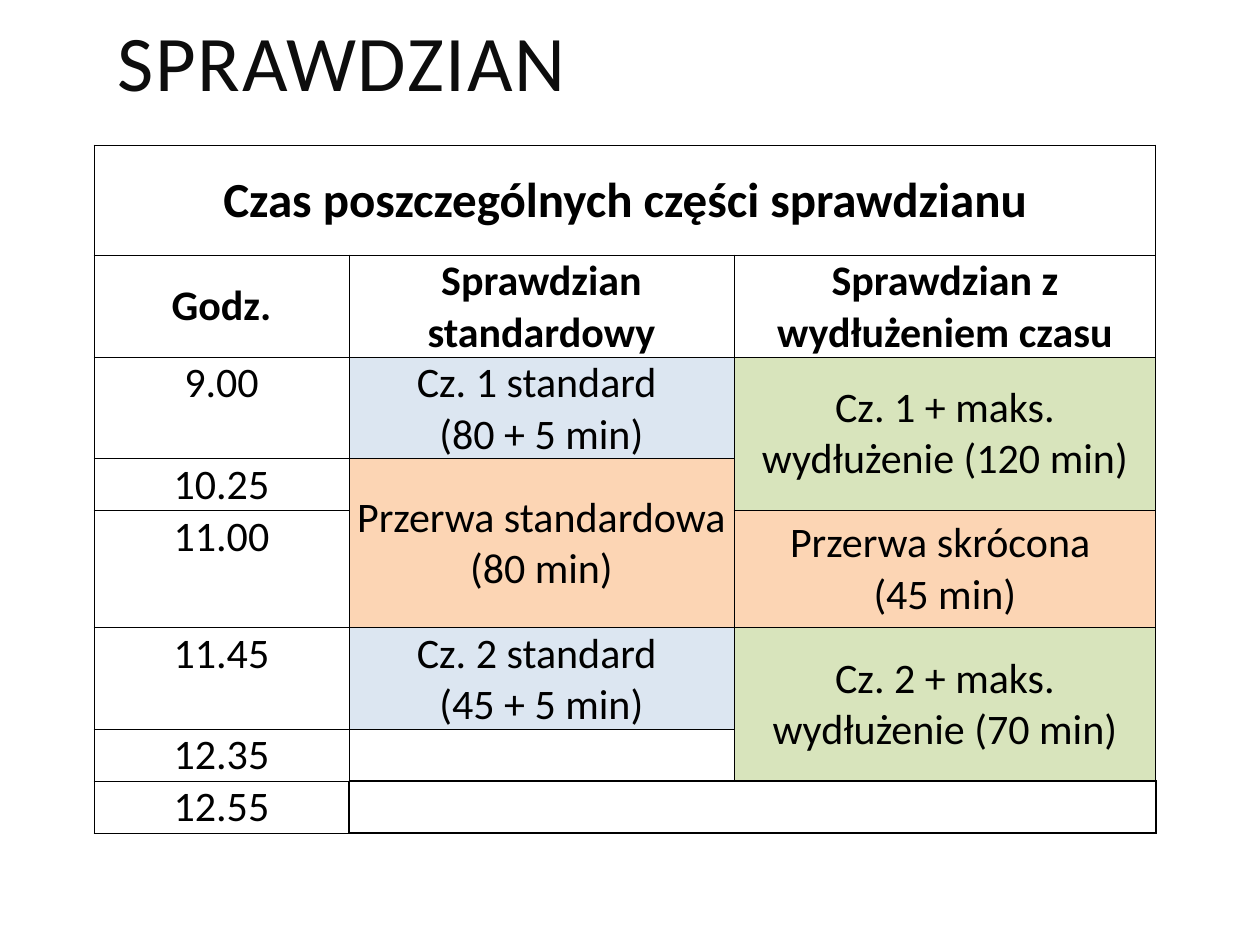
from lxml import etree
from pptx import Presentation
from pptx.dml.color import RGBColor
from pptx.enum.text import MSO_ANCHOR, PP_ALIGN
from pptx.oxml.ns import qn
from pptx.util import Pt

PX = 914400 // 126
FONT = "Calibri"
BLACK, BLUE, GREEN, ORANGE = "000000", "DCE6F1", "D8E4BC", "FCD5B4"

TITLE = "SPRAWDZIAN"
COLUMN_WIDTHS = [255, 385, 422]
ROW_HEIGHTS = [110, 102, 92, 48, 117, 92, 52, 52]
HEADER_ROWS = 2
TIMES = ["9.00", "10.25", "11.00", "11.45", "12.35", "12.55"]
BOTTOM_TIMES = ("12.35", "12.55")

# (row, column, rows spanned, columns spanned, text, fill)
BLOCKS = [
    (0, 0, 1, 3, "Czas poszczególnych części sprawdzianu", None),
    (1, 0, 1, 1, "Godz.", None),
    (1, 1, 1, 1, "Sprawdzian standardowy", None),
    (1, 2, 1, 1, "Sprawdzian z wydłużeniem czasu", None),
    (2, 1, 1, 1, "Cz. 1 standard \n(80 + 5 min)", BLUE),
    (2, 2, 2, 1, "Cz. 1 + maks. wydłużenie (120 min)", GREEN),
    (3, 1, 2, 1, "Przerwa standardowa (80 min)", ORANGE),
    (4, 2, 1, 1, "Przerwa skrócona \n(45 min)", ORANGE),
    (5, 1, 1, 1, "Cz. 2 standard \n(45 + 5 min)", BLUE),
    (5, 2, 2, 1, "Cz. 2 + maks. wydłużenie (70 min)", GREEN),
]

# Border widths in points that differ from the thin grid; 0 means no line
THIN = 0.5
BORDER_CHANGES = {
    (5, 2): {"B": 1},
    (6, 1): {"B": 1},
    (6, 2): {"B": 1},
    (7, 0): {"R": 1},
    (7, 1): {"L": 1, "T": 1, "B": 1, "R": 0},
    (7, 2): {"L": 0, "T": 1, "B": 1, "R": 1},
}


def color(value):
    return RGBColor.from_string(value)


def style_font(paragraph, size, text_color, bold=False):
    font = paragraph.font
    font.name, font.size, font.bold = FONT, Pt(size), bold
    font.color.rgb = color(text_color)


def set_borders(cell, changes):
    properties = cell._tc.get_or_add_tcPr()
    for side in "LRTB":
        width = changes.get(side, THIN)
        line = etree.SubElement(properties, qn(f"a:ln{side}"), w=str(Pt(width)))
        if width:
            fill = etree.SubElement(line, qn("a:solidFill"))
            etree.SubElement(fill, qn("a:srgbClr"), val=BLACK)
        else:
            etree.SubElement(line, qn("a:noFill"))


def write_cell(cell, text, size=24, bold=False, anchor=MSO_ANCHOR.MIDDLE):
    cell.vertical_anchor = anchor
    paragraph = cell.text_frame.paragraphs[0]
    paragraph.text = text
    paragraph.alignment = PP_ALIGN.CENTER
    style_font(paragraph, size, BLACK, bold)


def add_title(slide):
    box = slide.shapes.add_textbox(105 * PX, 26 * PX, 1004 * PX, 85 * PX)
    frame = box.text_frame
    frame.word_wrap = True
    frame.vertical_anchor = MSO_ANCHOR.MIDDLE
    paragraph = frame.paragraphs[0]
    paragraph.line_spacing = 0.8
    run = paragraph.add_run()
    run.text = TITLE
    style_font(paragraph, 45, "0D0D0D")
    run.font._element.set("spc", "100")


def add_schedule(slide):
    table = slide.shapes.add_table(
        len(ROW_HEIGHTS), len(COLUMN_WIDTHS), 94 * PX, 145 * PX,
        sum(COLUMN_WIDTHS) * PX, sum(ROW_HEIGHTS) * PX).table
    table.first_row = table.horz_banding = False
    for column, width in zip(table.columns, COLUMN_WIDTHS):
        column.width = width * PX
    for row, height in zip(table.rows, ROW_HEIGHTS):
        row.height = height * PX

    for row in range(len(ROW_HEIGHTS)):
        for column in range(len(COLUMN_WIDTHS)):
            cell = table.cell(row, column)
            cell.margin_left = cell.margin_right = cell.margin_top = PX
            cell.margin_bottom = 0
            set_borders(cell, BORDER_CHANGES.get((row, column), {}))
            cell.fill.background()

    for row, column, row_span, column_span, text, fill in BLOCKS:
        cell = table.cell(row, column)
        if row_span * column_span > 1:
            cell.merge(table.cell(row + row_span - 1, column + column_span - 1))
        write_cell(cell, text, 28 if row == 0 else 24, row < HEADER_ROWS)
        if fill:
            cell.fill.solid()
            cell.fill.fore_color.rgb = color(fill)

    for row, time in enumerate(TIMES, HEADER_ROWS):
        anchor = MSO_ANCHOR.BOTTOM if time in BOTTOM_TIMES else MSO_ANCHOR.TOP
        write_cell(table.cell(row, 0), time, anchor=anchor)


def main():
    presentation = Presentation()
    presentation.slide_width = 1260 * PX
    presentation.slide_height = 945 * PX
    slide = presentation.slides.add_slide(presentation.slide_layouts[6])
    add_title(slide)
    add_schedule(slide)
    presentation.save("out.pptx")


if __name__ == "__main__":
    main()
